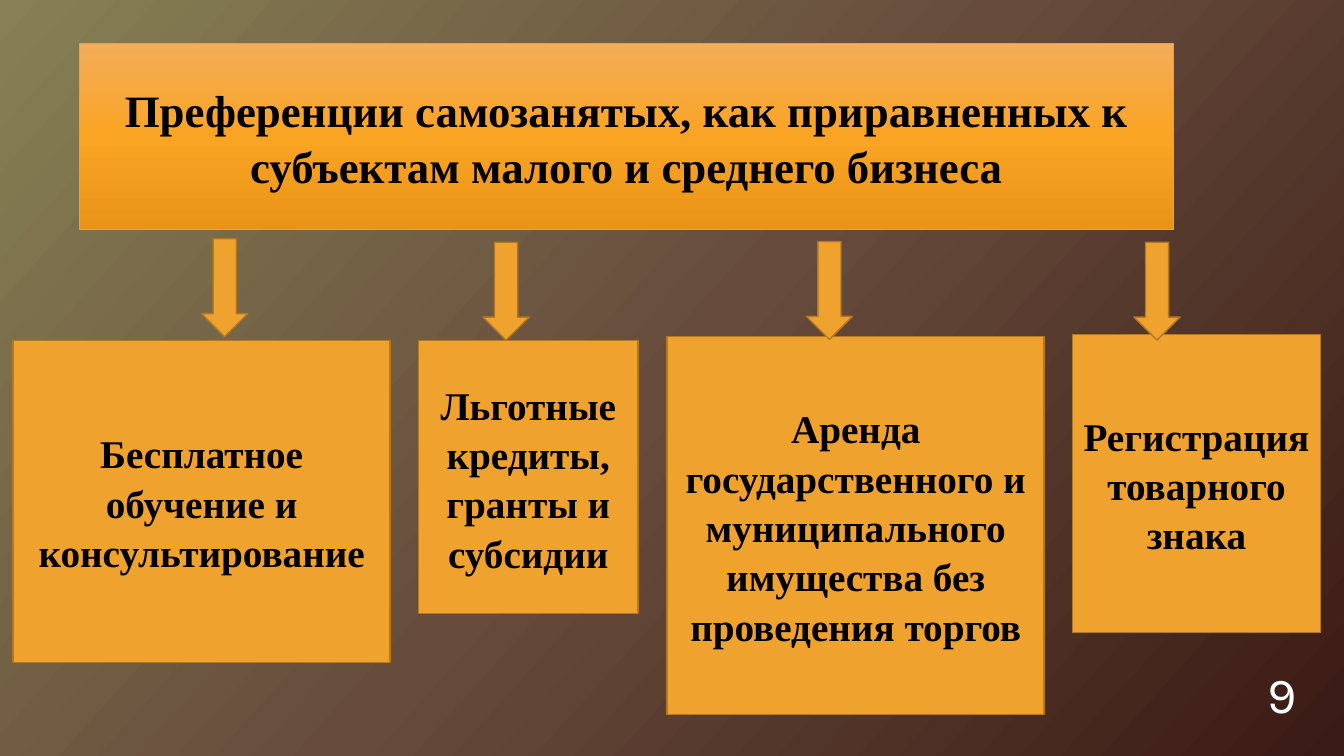
"""Build the slide on preferences for the self-employed."""
from lxml.etree import SubElement
from pptx import Presentation
from pptx.dml.color import RGBColor
from pptx.enum.shapes import MSO_SHAPE as SHAPE
from pptx.enum.text import MSO_ANCHOR as ANCHOR, MSO_AUTO_SIZE as AUTO, PP_ALIGN as ALIGN
from pptx.oxml.ns import qn
from pptx.util import Pt

TITLE = "Преференции самозанятых, как приравненных к субъектам малого и среднего бизнеса"
TITLE_AREA = (57, 31, 781, 133)
BOXES = [
    ("Бесплатное обучение и консультирование", (9.4, 243.4, 269.3, 229.7)),
    ("Льготные кредиты, гранты и субсидии", (298.8, 243.4, 157, 195)),
    ("Аренда государственного и муниципального имущества без проведения торгов",
     (476.6, 240.5, 269.3, 270)),
    ("Регистрация товарного знака", (766, 239, 177.2, 213)),
]
ARROWS = [(144, 170.5), (345, 173), (576, 172.5), (810, 173)]
ARROW_SIZE = (33, 70)
NUMBER = "9"
NUMBER_AREA = (898, 452, 62, 86)

ORANGE = RGBColor(0xF0, 0xA2, 0x2E)
BROWN = RGBColor(0xB2, 0x78, 0x22)
BLACK = RGBColor(0, 0, 0)
WHITE = RGBColor(0xFF, 0xFF, 0xFF)
PAGE_STOPS = [RGBColor(0x86, 0x80, 0x54), RGBColor(0x67, 0x4C, 0x3C), RGBColor(0x3A, 0x1A, 0x14)]
TITLE_STOPS = [RGBColor(0xF4, 0xAD, 0x58), RGBColor(0xFA, 0xA4, 0x24), RGBColor(0xE8, 0x94, 0x16)]

TITLE_FONT = {"name": "Times New Roman", "size": Pt(32), "bold": True}
BOX_FONT = {**TITLE_FONT, "size": Pt(28)}
NUMBER_FONT = {"name": "Karla", "size": Pt(36), "bold": False}


def set_gradient(fill, element, colors, angle):
    fill.gradient()
    fill.gradient_angle = 360 - angle
    stops = element.find(".//" + qn("a:gsLst"))
    for stop in list(stops):
        stops.remove(stop)
    for i, color in enumerate(colors):
        stop = SubElement(stops, qn("a:gs"), pos=str(100000 * i // (len(colors) - 1)))
        SubElement(stop, qn("a:srgbClr"), val=str(color))


def write(sp, text, font, color, align=ALIGN.CENTER, spacing=1.05):
    tf = sp.text_frame
    tf.word_wrap = True
    tf.auto_size = AUTO.NONE
    tf.vertical_anchor = ANCHOR.MIDDLE
    p = tf.paragraphs[0]
    p.alignment = align
    p.line_spacing = spacing
    r = p.add_run()
    r.text = text
    for key, value in font.items():
        setattr(r.font, key, value)
    r.font.color.rgb = color


def add_block(s, kind, area):
    sp = s.shapes.add_shape(kind, *map(Pt, area))
    sp.shadow.inherit = False
    sp.fill.solid()
    sp.fill.fore_color.rgb = ORANGE
    sp.line.color.rgb = BROWN
    sp.line.width = Pt(1)
    return sp


def main():
    prs = Presentation()
    prs.slide_width, prs.slide_height = Pt(960), Pt(540)
    s = prs.slides.add_slide(prs.slide_layouts[5])
    set_gradient(s.background.fill, s.element, PAGE_STOPS, 42)

    title = s.shapes.title
    title.left, title.top, title.width, title.height = map(Pt, TITLE_AREA)
    set_gradient(title.fill, title.element, TITLE_STOPS, 90)
    title.line.color.rgb = ORANGE
    title.line.width = Pt(0.75)
    write(title, TITLE, TITLE_FONT, BLACK)

    for text, area in BOXES:
        write(add_block(s, SHAPE.RECTANGLE, area), text, BOX_FONT, BLACK)
    for corner in ARROWS:
        add_block(s, SHAPE.DOWN_ARROW, corner + ARROW_SIZE)

    number = s.shapes.add_textbox(*map(Pt, NUMBER_AREA))
    write(number, NUMBER, NUMBER_FONT, WHITE, ALIGN.LEFT, 1.0)
    prs.save("out.pptx")


if __name__ == "__main__":
    main()
